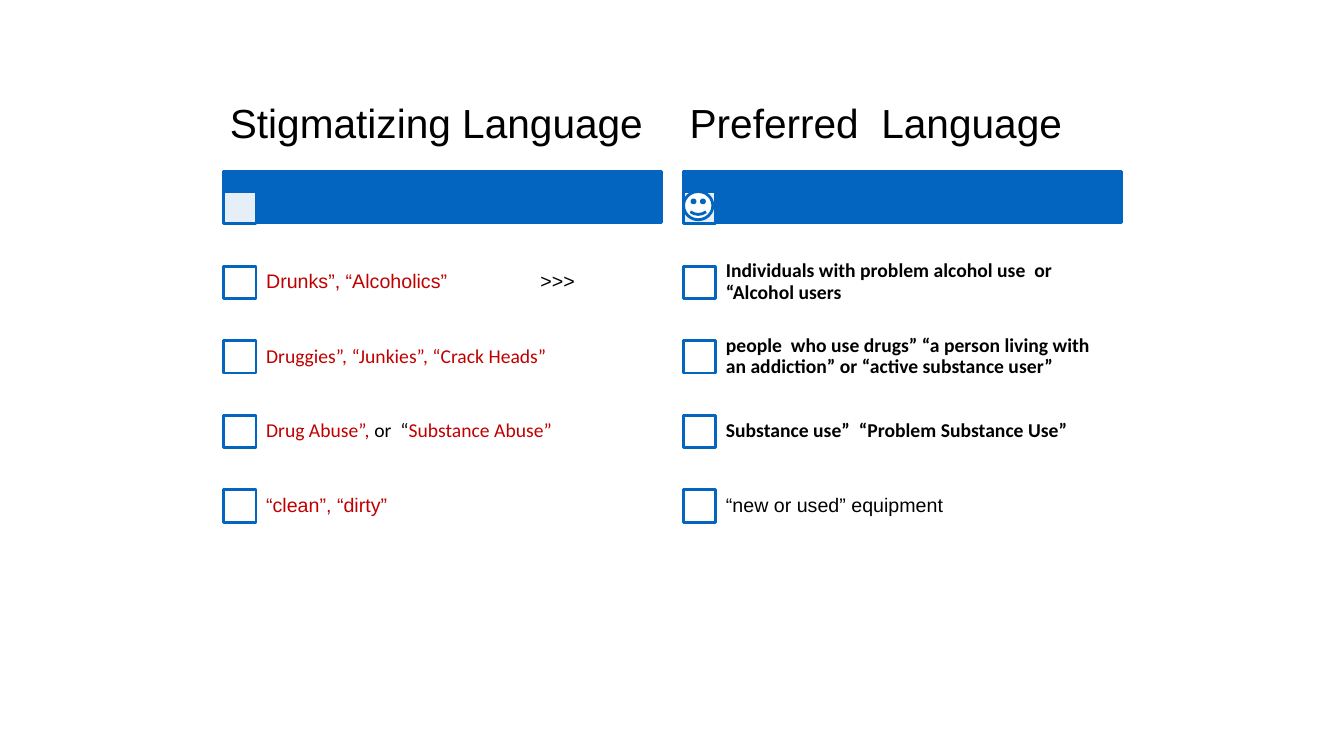
from lxml import etree
from pptx import Presentation
from pptx.dml.color import RGBColor
from pptx.enum import shapes, text
from pptx.oxml import ns
from pptx.util import Inches, Pt

BLUE = RGBColor(0x03, 0x65, 0xC0)
WHITE = RGBColor(0xFF, 0xFF, 0xFF)
BLACK = RGBColor(0, 0, 0)
RED = RGBColor(0xC0, 0, 0)

COLUMN_TOP, COLUMN_WIDTH = 0.79, 4.34
HEADING_HEIGHT, BAR_HEIGHT = 0.91, 0.51
BOX_SIZE = 0.32
FIRST_ROW, ROW_HEIGHT = 1.64, 0.74  # first row measured from the column top
LABEL_INDENT = 0.31
ARROWS_TAB = 2.72

# Each row: font, bold, runs of (wording, colour)
STIGMATIZING = [
    ("Arial", False, [("Drunks”, “Alcoholics”", RED), ("\t>>>", BLACK)]),
    ("Calibri", False, [("Druggies”, “Junkies”, “Crack Heads”", RED)]),
    ("Calibri", False, [("Drug Abuse”, ", RED), ("or  “", BLACK),
                        ("Substance Abuse”", RED)]),
    ("Arial", False, [("“clean”, “dirty”", RED)]),
]
PREFERRED = [
    ("Calibri", True, [("Individuals with problem alcohol use  or  “Alcohol users", BLACK)]),
    ("Calibri", True, [("people  who use drugs” “a person living with an addiction” "
                        "or “active substance user”", BLACK)]),
    ("Calibri", True, [("Substance use”  “Problem Substance Use”", BLACK)]),
    ("Arial", False, [("“new or used” equipment", BLACK)]),
]


def add_outlined(slide, kind, left, top, width, height, fill):
    sp = slide.shapes.add_shape(kind, Inches(left), Inches(top),
                                Inches(width), Inches(height))
    sp.shadow.inherit = False
    sp.fill.solid()
    sp.fill.fore_color.rgb = fill
    sp.line.color.rgb = BLUE
    sp.line.width = Pt(2)
    return sp


def set_alpha(sp, percent):
    color = sp._element.spPr.find(ns.qn("a:solidFill"))[0]
    etree.SubElement(color, ns.qn("a:alpha"), val=str(percent * 1000))


def add_tab_stop(p, position):
    tabs = etree.SubElement(p._p.get_or_add_pPr(), ns.qn("a:tabLst"))
    etree.SubElement(tabs, ns.qn("a:tab"), pos=str(Inches(position)), algn="l")


def add_label(slide, left, top, width, height, margins, size, font, bold, runs):
    """Add one vertically centred paragraph made of coloured runs."""
    tf = slide.shapes.add_textbox(Inches(left), Inches(top),
                                  Inches(width), Inches(height)).text_frame
    tf.word_wrap = True
    tf.vertical_anchor = text.MSO_ANCHOR.MIDDLE
    tf.margin_left = tf.margin_right = Inches(margins[0])
    tf.margin_top = tf.margin_bottom = Inches(margins[1])
    p = tf.paragraphs[0]
    p.line_spacing = 0.9
    if any("\t" in wording for wording, _ in runs):
        add_tab_stop(p, ARROWS_TAB)
    p.font.size = Pt(size)
    p.font.name = font
    p.font.bold = bold
    for wording, color in runs:
        r = p.add_run()
        r.text = wording
        r.font.color.rgb = color


def add_column(slide, left, top, width, heading, rows):
    """Add a heading, its blue bar and the checkbox rows below."""
    rect = shapes.MSO_SHAPE.RECTANGLE
    bar_top = top + HEADING_HEIGHT
    add_outlined(slide, rect, left, bar_top, width, BAR_HEIGHT, BLUE)
    bar_box = add_outlined(slide, rect, left, bar_top + 0.2, BOX_SIZE, BOX_SIZE, WHITE)
    set_alpha(bar_box, 90)
    add_label(slide, left, top, width, HEADING_HEIGHT, (0.06, 0.04),
              29, "Arial", False, [(heading, BLACK)])
    for i, (font, bold, runs) in enumerate(rows):
        row_top = top + FIRST_ROW + i * ROW_HEIGHT
        add_outlined(slide, rect, left, row_top + (ROW_HEIGHT - BOX_SIZE) / 2,
                     BOX_SIZE, BOX_SIZE, WHITE)
        add_label(slide, left + LABEL_INDENT, row_top, width - LABEL_INDENT,
                  ROW_HEIGHT, (0.11, 0.11), 14, font, bold, runs)


def main():
    prs = Presentation()
    prs.slide_width, prs.slide_height = Inches(13.33), Inches(7.5)
    slide = prs.slides.add_slide(prs.slide_layouts[6])
    preferred_left = 6.78
    add_column(slide, 2.22, COLUMN_TOP, COLUMN_WIDTH, "Stigmatizing Language", STIGMATIZING)
    add_column(slide, preferred_left, COLUMN_TOP, COLUMN_WIDTH, "Preferred  Language", PREFERRED)
    add_outlined(slide, shapes.MSO_SHAPE.SMILEY_FACE, preferred_left,
                 COLUMN_TOP + HEADING_HEIGHT + 0.2, 0.29, 0.28, WHITE)
    prs.save("out.pptx")


if __name__ == "__main__":
    main()
